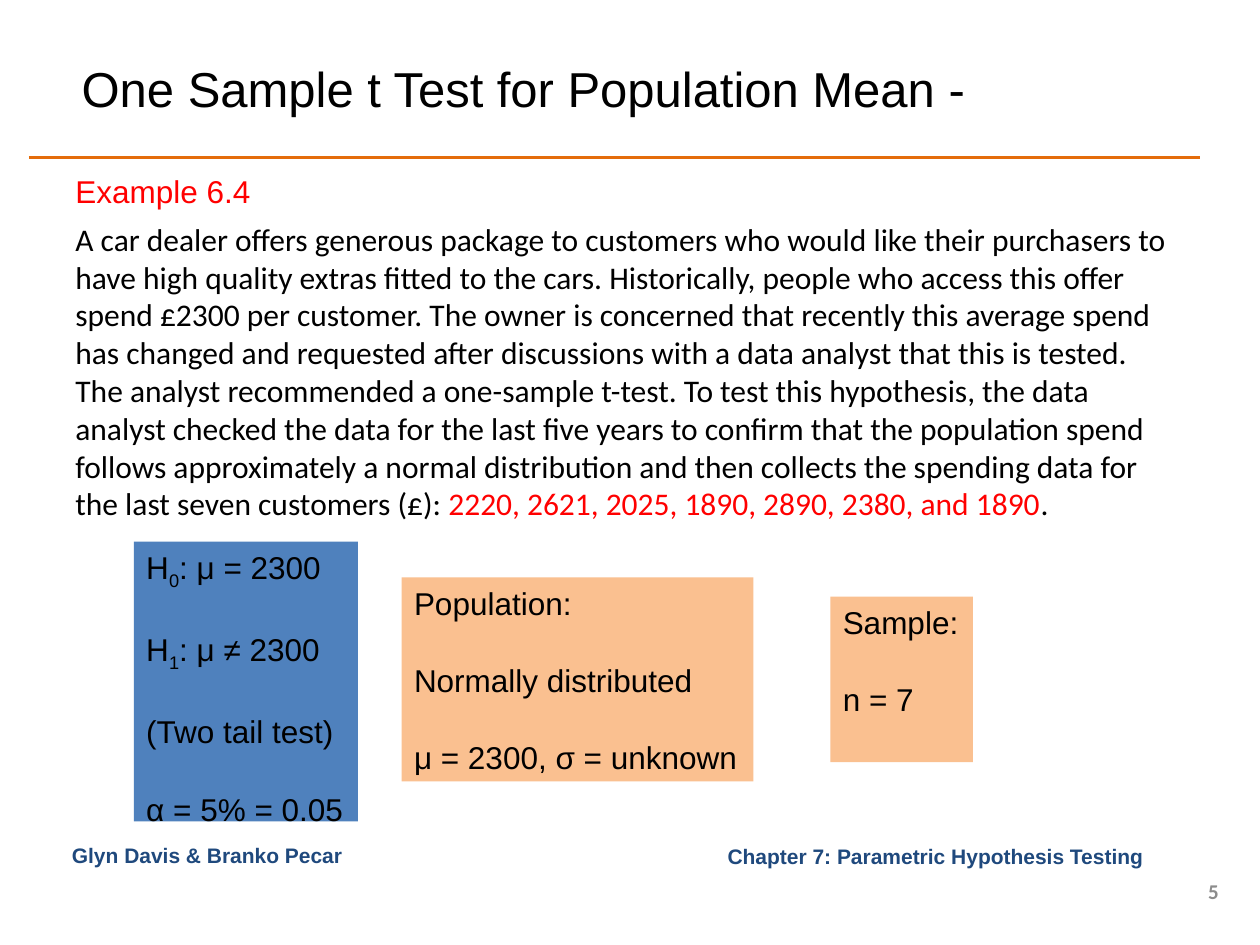
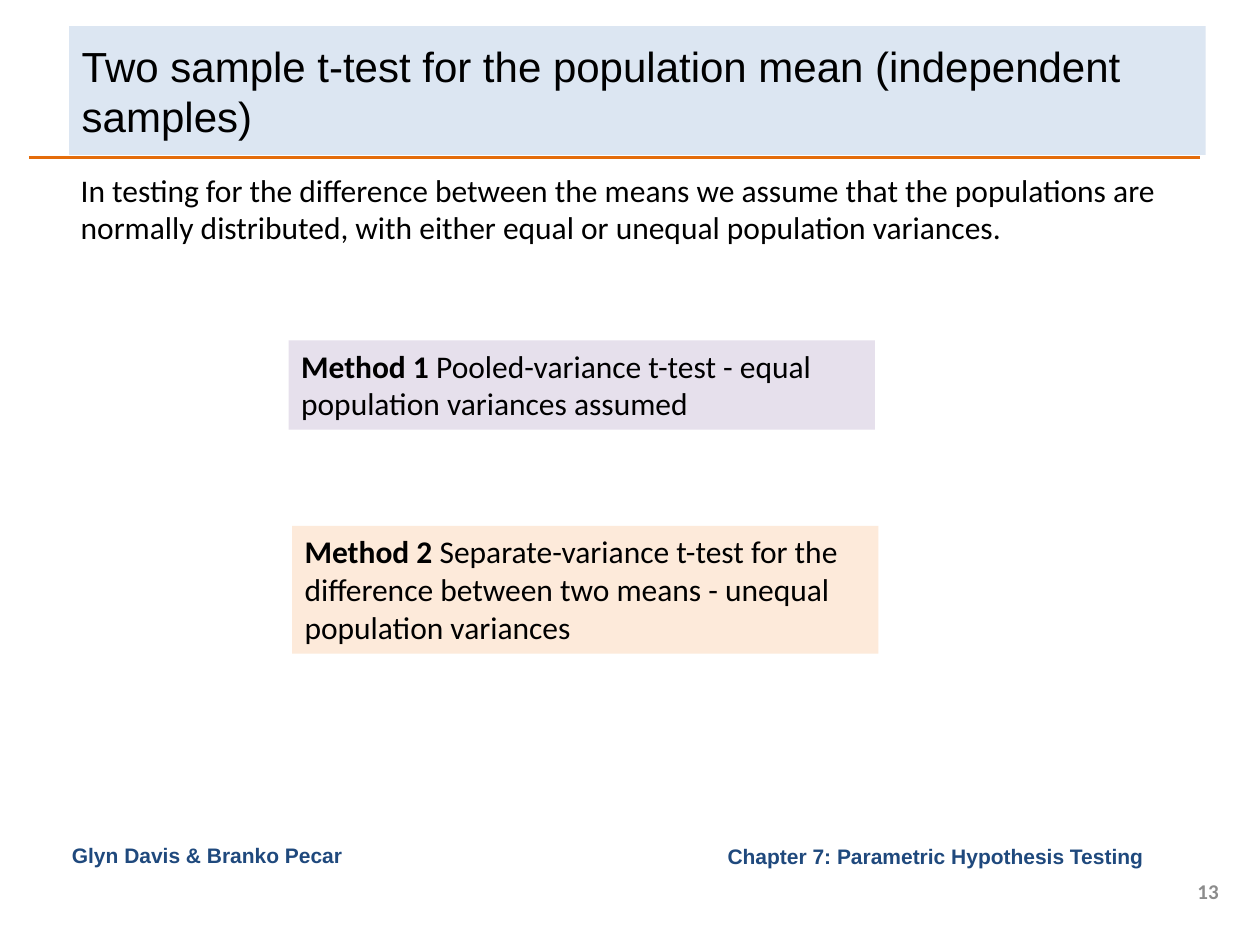
"""Build two slides on t tests for the population mean."""
from lxml import etree
from pptx import Presentation
from pptx.dml.color import RGBColor
from pptx.enum.shapes import MSO_CONNECTOR, MSO_SHAPE
from pptx.enum.text import MSO_ANCHOR, MSO_AUTO_SIZE, PP_ALIGN
from pptx.oxml.ns import qn
from pptx.util import Pt

LEFT, RIGHT = PP_ALIGN.LEFT, PP_ALIGN.RIGHT
TOP, MIDDLE = MSO_ANCHOR.TOP, MSO_ANCHOR.MIDDLE
NO_FIT = MSO_AUTO_SIZE.NONE
RECT, LINE = MSO_SHAPE.RECTANGLE, MSO_CONNECTOR.STRAIGHT

HEAD, BODY = "Arial", "Calibri"
BLACK, RED, NAVY, GREY = "000000", "FF0000", "1F497D", "8C8C8C"
ORANGE, PEACH, BLUE = "E46C0A", "FAC090", "4F81BD"
PALE, LILAC, CREAM = "DCE6F2", "E6E0EC", "FDEADA"


def color(code):
    return RGBColor.from_string(code)


class Deck:
    def __init__(self):
        self.prs = Presentation()
        self.prs.slide_width, self.prs.slide_height = Pt(720), Pt(540)
        self.slide = None

    def start(self, number):
        self.slide = self.prs.slides.add_slide(self.prs.slide_layouts[5])
        self.rule(16.5, 90, 686)
        self.foot("Chapter 7: Parametric Hypothesis Testing ", (270, 478, 394, 22.5))
        self.foot("Glyn Davis & Branko Pecar", (34, 478, 214, 22.5), LEFT, TOP)
        self.foot(number, (669.5, 500.5, 34, 17), font=BODY, ink=GREY)

    def rule(self, left, top, right):
        line = self.slide.shapes.add_connector(LINE, Pt(left), Pt(top), Pt(right), Pt(top))
        line.line.color.rgb = color(ORANGE)
        line.line.width = Pt(2)
        etree.SubElement(line._element.spPr, qn("a:effectLst"))

    def foot(self, text, area, align=RIGHT, anchor=MIDDLE, font=HEAD, ink=NAVY):
        self.text([[text]], area, font=font, size=12, ink=ink, bold=True,
                  align=align, anchor=anchor)

    def title(self, text, area, size, fill=None):
        shape = self.slide.shapes.title
        shape.left, shape.top, shape.width, shape.height = map(Pt, area)
        if fill:
            self.paint(shape, fill)
        self.label(shape, [[text]], size=size, anchor=MIDDLE)

    def text(self, lines, area, **style):
        self.label(self.slide.shapes.add_textbox(*map(Pt, area)), lines, **style)

    def box(self, lines, area, fill, **style):
        shape = self.slide.shapes.add_shape(RECT, *map(Pt, area))
        shape.shadow.inherit = False
        self.paint(shape, fill)
        self.label(shape, lines, **style)

    def paint(self, shape, fill):
        shape.fill.solid()
        shape.fill.fore_color.rgb = color(fill)
        shape.line.fill.background()

    def label(self, shape, lines, font=HEAD, size=18, ink=BLACK, bold=False,
              align=LEFT, anchor=TOP, wrap=True, gap=0):
        frame = shape.text_frame
        frame.auto_size, frame.word_wrap = NO_FIT, wrap
        frame.vertical_anchor = anchor
        for i, parts in enumerate(lines):
            para = frame.add_paragraph() if i else frame.paragraphs[0]
            para.alignment = align
            para.space_before = Pt(gap if i else 0)
            para.font.name, para.font.size = font, Pt(size)
            para.font.bold, para.font.color.rgb = bold, color(ink)
            for part in parts:
                self.add(para, *([part] if isinstance(part, str) else part))

    def add(self, para, text, look=None):
        run = para.add_run()
        run.text = text
        if look == "bold":
            run.font.bold = True
        elif look == "sub":
            run.font._element.set("baseline", "-25000")
        elif look:
            run.font.color.rgb = color(look)


def one_sample(deck):
    deck.start("5")
    deck.title("One Sample t Test for Population Mean -", (39.5, 22.5, 644, 56), 28)
    facts = (
        ((76.5, 309.5, 128, 160), BLUE, [
            ["H", ("0", "sub"), ": μ = 2300"], ["H", ("1", "sub"), ": μ ≠ 2300"],
            ["(Two tail test)"], ["α = 5% = 0.05"]]),
        ((229.5, 330, 201, 116.5), PEACH, [
            ["Population:"], ["Normally distributed"], ["μ = 2300, σ = unknown"]]),
        ((474.5, 341, 81.5, 94.5), PEACH, [["Sample:"], ["n = 7"]]),
    )
    for area, fill, lines in facts:
        deck.box(lines, area, fill, wrap=False, gap=22.5)
    story = (
        "A car dealer offers generous package to customers who would like their "
        "purchasers to have high quality extras fitted to the cars. Historically, "
        "people who access this offer spend £2300 per customer. The owner is "
        "concerned that recently this average spend has changed and requested after "
        "discussions with a data analyst that this is tested. The analyst recommended "
        "a one-sample t-test. To test this hypothesis, the data analyst checked the "
        "data for the last five years to confirm that the population spend follows "
        "approximately a normal distribution and then collects the spending data for "
        "the last seven customers (£): ")
    data = "2220, 2621, 2025, 1890, 2890, 2380, and 1890"
    deck.text([[story, (data, RED), "."]], (36, 122, 646.5, 181), font=BODY)
    deck.text([["Example 6.4"]], (36, 95, 115, 29), ink=RED, wrap=False)


def two_sample(deck):
    deck.start("13")
    deck.title("Two sample t-test for the population mean (independent samples)",
               (39.5, 15, 649.5, 73.5), 24, PALE)
    deck.text([["In testing for the difference between the means we assume that the "
                "populations are normally distributed, with either equal or unequal "
                "population variances."]], (39, 94, 643.5, 51), font=BODY)
    ways = (
        ("Method 1", " Pooled-variance t-test - equal population variances assumed",
         (165, 194.5, 335, 51), LILAC),
        ("Method 2", " Separate-variance t-test for the difference between two means "
         "- unequal population variances", (167, 300.5, 335, 73), CREAM),
    )
    for name, note, area, fill in ways:
        deck.box([[(name, "bold"), note]], area, fill, font=BODY)


def main():
    deck = Deck()
    one_sample(deck)
    two_sample(deck)
    deck.prs.save("out.pptx")


if __name__ == "__main__":
    main()
